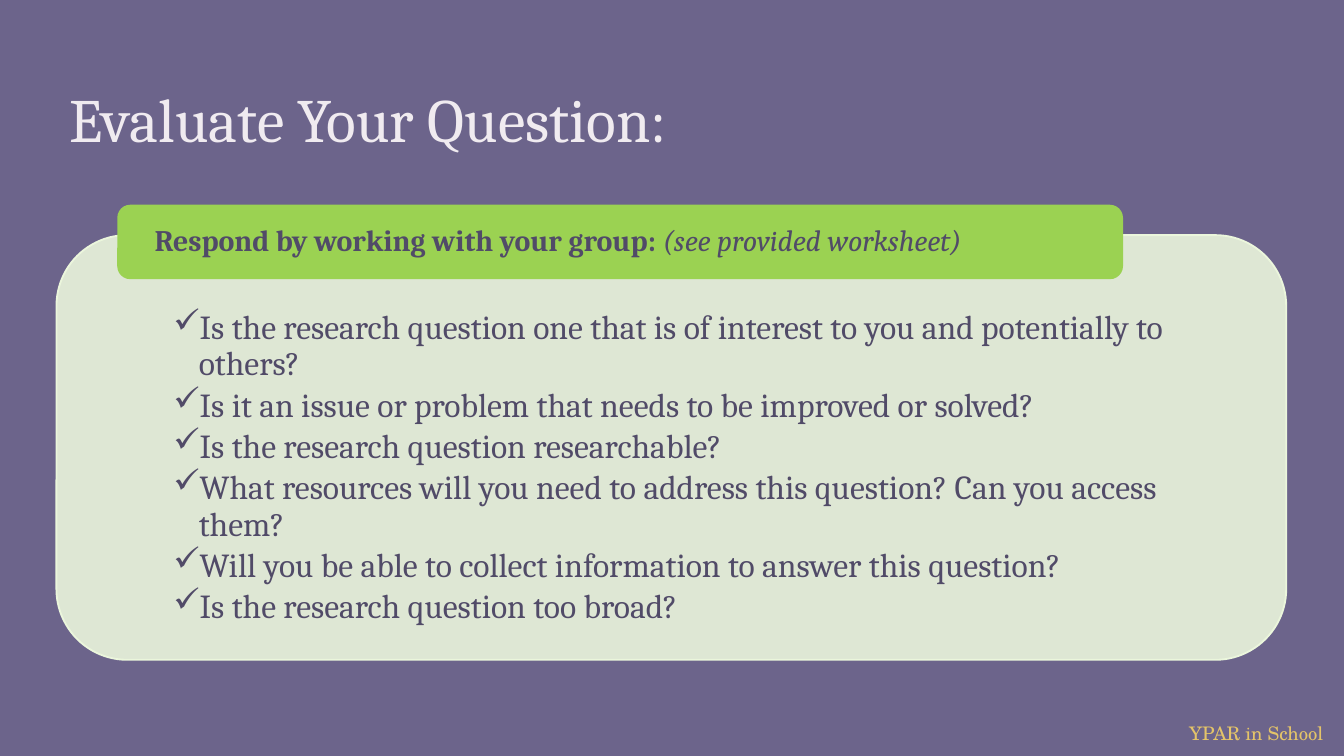
from dataclasses import dataclass
from typing import NamedTuple

from lxml import etree
from pptx import Presentation
from pptx.dml.color import RGBColor
from pptx.enum.shapes import MSO_SHAPE
from pptx.enum.text import MSO_ANCHOR
from pptx.oxml.ns import qn
from pptx.util import Pt

ROUNDED = MSO_SHAPE.ROUNDED_RECTANGLE
TOP, MIDDLE, BOTTOM = MSO_ANCHOR.TOP, MSO_ANCHOR.MIDDLE, MSO_ANCHOR.BOTTOM


@dataclass(frozen=True)
class Theme:
    background: str = "6C648B"
    title: str = "F0EBF0"
    panel: str = "EBF6DC"
    banner: str = "9BD252"
    ink: str = "514B68"
    footer: str = "E4C469"
    font: str = "Cambria"
    footer_font: str = "TeX Gyre Schola"
    title_size: float = 33
    body_size: float = 18
    banner_size: float = 16
    footer_size: float = 10


class Box(NamedTuple):
    left: float
    top: float
    width: float
    height: float

    def lengths(self) -> list:
        return [Pt(v) for v in self]


class Insets(NamedTuple):
    left: float = 7.2
    top: float = 7.2
    right: float = 7.2
    bottom: float = 7.2


class Run(NamedTuple):
    text: str
    bold: bool = False
    italic: bool = False


class Style(NamedTuple):
    font: str
    size: float
    color: str
    bullet: str = ""
    line_spacing: float = 1.0
    space_after: float = 0


THEME = Theme()
HANG = 13.7

TITLE_BOX = Box(30.24, 36, 658.8, 54)
PANEL_BOX = Box(30.24, 126, 658.8, 227.5)
QUESTIONS_BOX = Box(41.76, 136.8, 636.5, 205.2)
BANNER_BOX = Box(63.36, 110.2, 537.8, 38.9)
BANNER_TEXT_BOX = Box(65.5, 112.3, 533.5, 34.6)
FOOTER_BOX = Box(630, 383, 201.6, 19.4)

QUESTIONS = [
    "Is the research question one that is of interest to you and potentially to others?",
    "Is it an issue or problem that needs to be improved or solved?",
    "Is the research question researchable?",
    "What resources will you need to address this question? Can you access them?",
    "Will you be able to collect information to answer this question?",
    "Is the research question too broad?",
]


def rgb(color: str) -> RGBColor:
    return RGBColor.from_string(color)


def add_panel(s, box: Box, color: str, opacity: int = 100) -> None:
    sp = s.shapes.add_shape(ROUNDED, *box.lengths())
    sp.shadow.inherit = False
    sp.fill.solid()
    sp.fill.fore_color.rgb = rgb(color)
    sp.line.color.rgb = rgb(color)
    sp.line.width = Pt(1)
    if opacity < 100:
        clr = sp.fill._xPr.find(qn("a:solidFill"))[0]
        etree.SubElement(clr, qn("a:alpha"), val=str(opacity * 1000))


def add_bullet(p, char: str, color: str) -> None:
    pPr = p._p.get_or_add_pPr()
    pPr.set("marL", str(Pt(HANG)))
    pPr.set("indent", str(-Pt(HANG)))
    clr = etree.SubElement(pPr, qn("a:buClr"))
    etree.SubElement(clr, qn("a:srgbClr"), val=color)
    etree.SubElement(pPr, qn("a:buChar"), char=char)


def add_text(s, box: Box, paragraphs: list[list[Run]], style: Style,
             insets: Insets = Insets(), anchor=TOP) -> None:
    tf = s.shapes.add_textbox(*box.lengths()).text_frame
    tf.word_wrap = True
    tf.vertical_anchor = anchor
    tf.margin_left, tf.margin_top, tf.margin_right, tf.margin_bottom = (
        Pt(v) for v in insets)
    for i, runs in enumerate(paragraphs):
        p = tf.add_paragraph() if i else tf.paragraphs[0]
        if style.bullet:
            add_bullet(p, style.bullet, style.color)
        p.line_spacing = style.line_spacing
        p.space_after = Pt(style.space_after)
        for run in runs:
            r = p.add_run()
            r.text = run.text
            r.font.name = style.font
            r.font.size = Pt(style.size)
            r.font.color.rgb = rgb(style.color)
            r.font.bold = run.bold
            r.font.italic = run.italic


def main() -> None:
    prs = Presentation()
    prs.slide_width, prs.slide_height = Pt(720), Pt(405)
    s = prs.slides.add_slide(prs.slide_layouts[6])
    s.background.fill.solid()
    s.background.fill.fore_color.rgb = rgb(THEME.background)

    # Footer and title
    add_text(s, FOOTER_BOX, [[Run("YPAR in School")]],
             Style(THEME.footer_font, THEME.footer_size, THEME.footer),
             Insets(top=3.6, bottom=3.6))
    add_text(s, TITLE_BOX, [[Run("Evaluate Your Question:")]],
             Style(THEME.font, THEME.title_size, THEME.title), anchor=BOTTOM)

    # Panel with the checklist
    add_panel(s, PANEL_BOX, THEME.panel, opacity=90)
    add_text(s, QUESTIONS_BOX, [[Run(q)] for q in QUESTIONS],
             Style(THEME.font, THEME.body_size, THEME.ink, "✓", 0.9, 2.7),
             Insets(51.1, 29.5, 51.1, 10.1))

    # Banner over the panel's top edge
    add_panel(s, BANNER_BOX, THEME.banner)
    add_text(s, BANNER_TEXT_BOX,
             [[Run("Respond by working with your group: ", bold=True),
               Run("(see provided worksheet)", italic=True)]],
             Style(THEME.font, THEME.banner_size, THEME.ink, line_spacing=0.9),
             Insets(17.3, 0, 17.3, 0), MIDDLE)

    prs.save("out.pptx")


if __name__ == "__main__":
    main()
